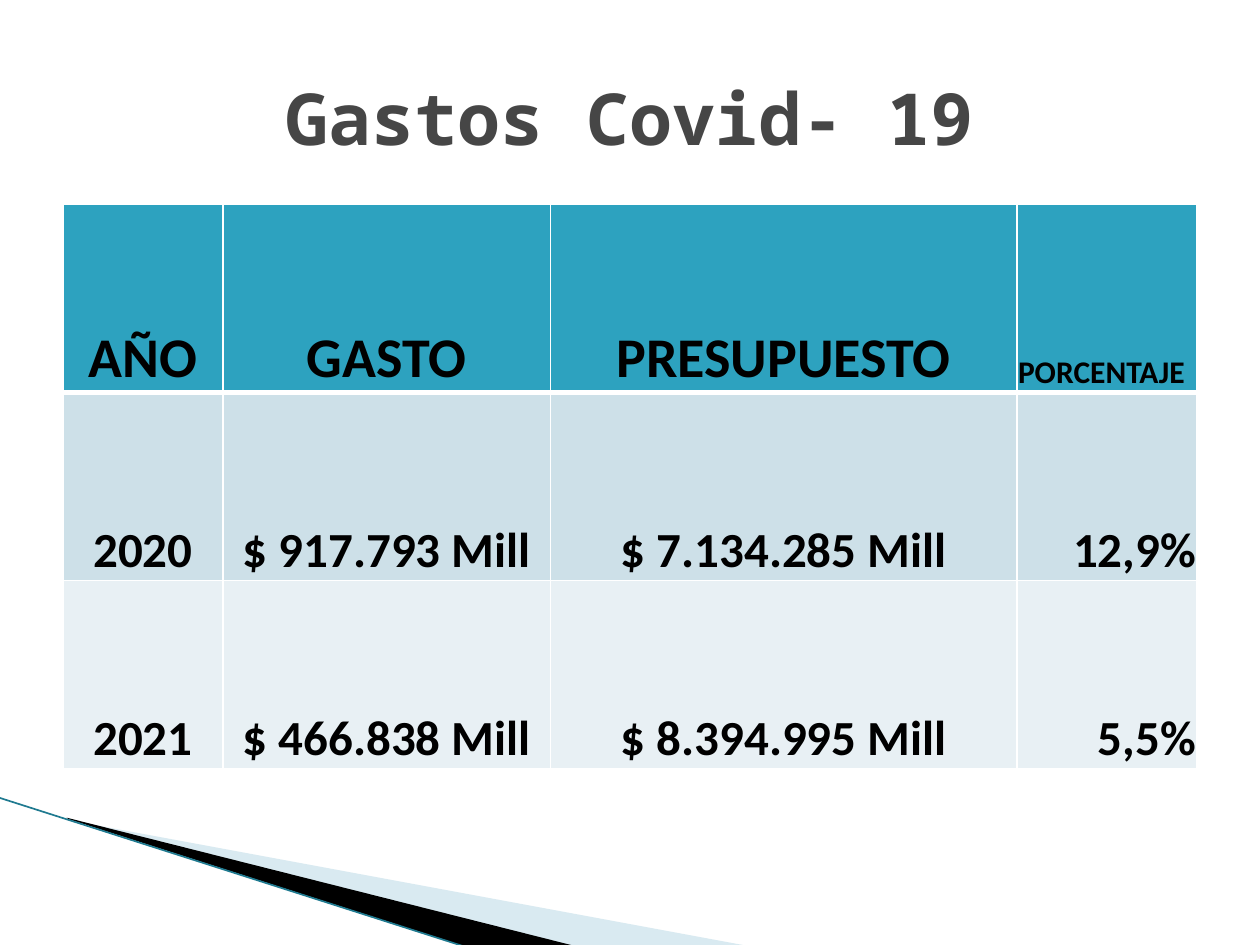
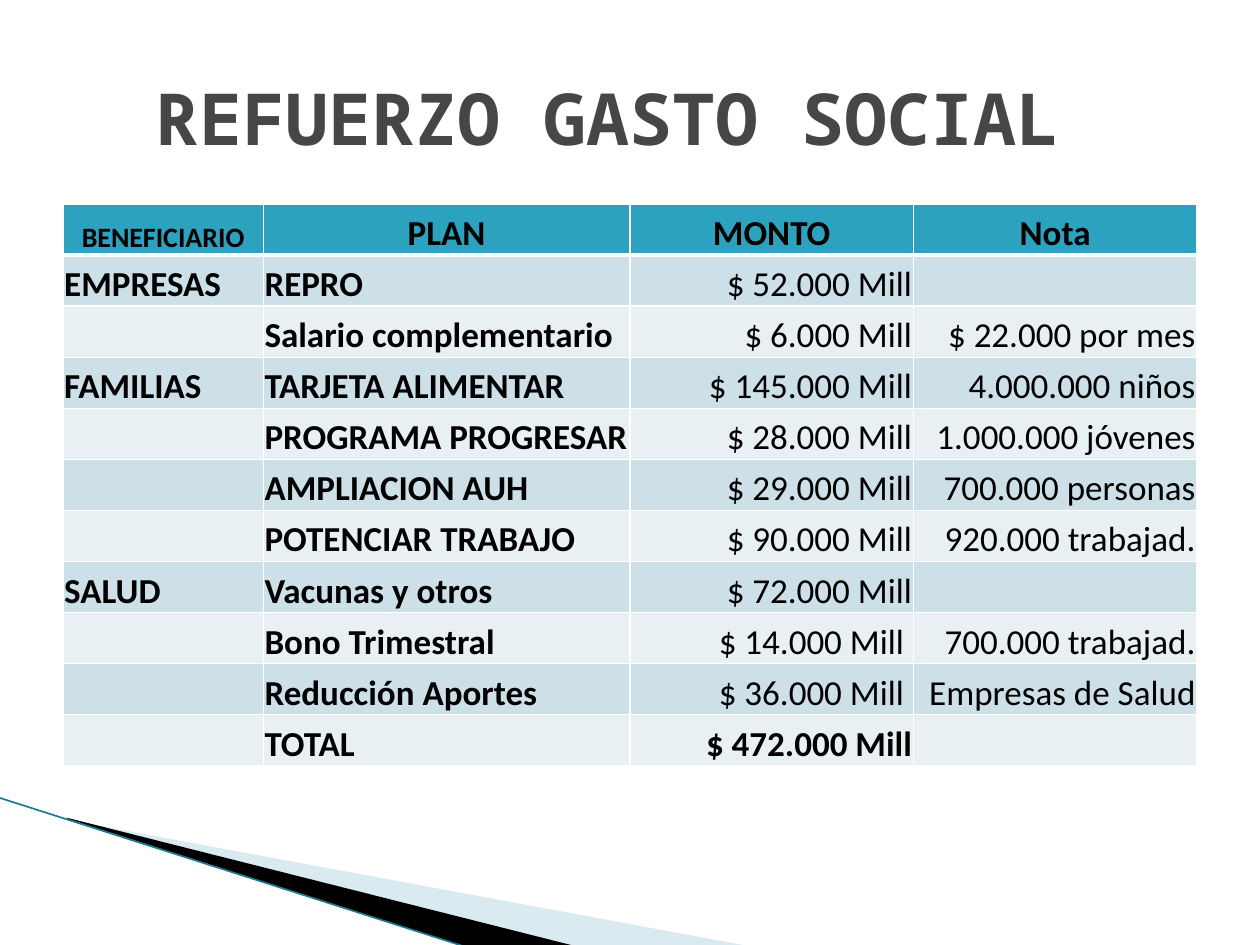
from lxml import etree
from pptx import Presentation
from pptx.dml.color import RGBColor
from pptx.enum import shapes, text
from pptx.oxml import ns
from pptx.util import Inches, Pt

# Content: alignments are one letter a column (l, c, r)
SLIDES = [
    {
        "title": "Gastos Covid- 19",
        "widths": [1.27, 2.6, 3.7, 1.43],
        "height": 4.48,
        "header_sizes": [32, 32, 32, 18],
        "header_align": "cccl",
        "body_size": 28,
        "body_align": "cccr",
        "bold_columns": {0, 1, 2, 3},
        "rows": [
            ("AÑO", "GASTO", "PRESUPUESTO", "PORCENTAJE"),
            ("2020", "$ 917.793 Mill", "$ 7.134.285 Mill", "12,9%"),
            ("2021", "$ 466.838 Mill", "$ 8.394.995 Mill", "5,5%"),
        ],
    },
    {
        "title": "REFUERZO GASTO SOCIAL ",
        "widths": [1.59, 2.91, 2.25, 2.25],
        "height": 4.46,
        "header_sizes": [16, 20, 20, 20],
        "header_align": "cccc",
        "body_size": 20,
        "body_align": "llrr",
        "bold_columns": {0, 1},
        "rows": [
            ("BENEFICIARIO", "PLAN", "MONTO", "Nota"),
            ("EMPRESAS", "REPRO", "$ 52.000 Mill", ""),
            ("", "Salario complementario", "$ 6.000 Mill", "$ 22.000 por mes"),
            ("FAMILIAS", "TARJETA ALIMENTAR", "$ 145.000 Mill", "4.000.000 niños"),
            ("", "PROGRAMA PROGRESAR", "$ 28.000 Mill", "1.000.000 jóvenes"),
            ("", "AMPLIACION AUH", "$ 29.000 Mill", "700.000 personas"),
            ("", "POTENCIAR TRABAJO", "$ 90.000 Mill", "920.000 trabajad."),
            ("SALUD", "Vacunas y otros", "$ 72.000 Mill", ""),
            ("", "Bono Trimestral", "$ 14.000 Mill ", "700.000 trabajad."),
            ("", "Reducción Aportes", "$ 36.000 Mill ", "Empresas de Salud"),
            ("", "TOTAL", "$ 472.000 Mill", ""),
        ],
    },
]

# Shared look
TITLE_FONT, TABLE_FONT = "Noto Sans Mono", "Calibri"
TITLE_GREY, INK, WHITE = "464646", "000000", "FFFFFF"
HEADER_FILL, BAND_FILLS = "2DA2BF", ("CDE0E8", "E8F0F4")
EDGE_LINE = "1F7A90"
ALIGN = {"l": text.PP_ALIGN.LEFT, "c": text.PP_ALIGN.CENTER, "r": text.PP_ALIGN.RIGHT}

# Corner wedges: outline, fill, opacity in percent
WEDGES = [
    ([(0.55, 6.51), (5.95, 7.51), (4.56, 7.51), (0.55, 6.5)], "A0CBDC", 40),
    ([(0.53, 6.49), (4.57, 7.51), (3.72, 7.52), (0.54, 6.5)], "000000", 100),
]


def color(hex_code):
    return RGBColor.from_string(hex_code)


def style_runs(para, font_name, size, hex_code, bold):
    for span in para.runs:
        span.font.name = font_name
        span.font.size = Pt(size)
        span.font.bold = bold
        span.font.color.rgb = color(hex_code)


def add_corner(page):
    for points, fill, opacity in WEDGES:
        corners = [(Inches(x), Inches(y)) for x, y in points]
        builder = page.shapes.build_freeform(*corners[0])
        builder.add_line_segments(corners[1:], close=True)
        wedge = builder.convert_to_shape()
        wedge.shadow.inherit = False
        wedge.line.fill.background()
        wedge.fill.solid()
        wedge.fill.fore_color.rgb = color(fill)
        if opacity < 100:
            tint = wedge.fill._xPr.find(".//" + ns.qn("a:srgbClr"))
            etree.SubElement(tint, ns.qn("a:alpha"), val=str(opacity * 1000))
    edge = page.shapes.add_connector(
        shapes.MSO_CONNECTOR.STRAIGHT,
        Inches(-0.01), Inches(6.33), Inches(3.71), Inches(7.52))
    edge.line.color.rgb = color(EDGE_LINE)
    edge.line.width = Pt(0.95)
    etree.SubElement(edge._element.spPr, ns.qn("a:effectLst"))


def add_title(page, title):
    box = page.shapes.add_textbox(Inches(0.5), Inches(0.3), Inches(9), Inches(1.25))
    frame = box.text_frame
    frame.word_wrap = True
    frame.vertical_anchor = text.MSO_ANCHOR.MIDDLE
    frame.text = title
    para = frame.paragraphs[0]
    para.alignment = ALIGN["c"]
    style_runs(para, TITLE_FONT, 41, TITLE_GREY, True)


def set_borders(cell, widths):
    """Widths in points for the left, right, top and bottom side."""
    properties = cell._tc.get_or_add_tcPr()
    for index, (side, width) in enumerate(zip("LRTB", widths)):
        line = etree.Element(ns.qn(f"a:ln{side}"), w=str(Pt(width)))
        fill = etree.SubElement(line, ns.qn("a:solidFill"))
        etree.SubElement(fill, ns.qn("a:srgbClr"), val=WHITE)
        properties.insert(index, line)


def fill_cell(cell, words, fill, size, align, bold):
    cell.margin_left = cell.margin_right = cell.margin_top = Inches(0.01)
    cell.margin_bottom = 0
    cell.vertical_anchor = text.MSO_ANCHOR.BOTTOM
    cell.fill.solid()
    cell.fill.fore_color.rgb = color(fill)
    para = cell.text_frame.paragraphs[0]
    para.alignment = ALIGN[align]
    if words:
        para.text = words
        style_runs(para, TABLE_FONT, size, INK, bold)
    else:
        para.font.size = Pt(size)


def add_spending_table(page, content):
    rows, widths = content["rows"], content["widths"]
    table = page.shapes.add_table(
        len(rows), len(widths), Inches(0.5), Inches(1.62),
        Inches(9), Inches(content["height"])).table
    table.horz_banding = False
    for column, width in zip(table.columns, widths):
        column.width = Inches(width)
    for r, row in enumerate(rows):
        table.rows[r].height = Inches(content["height"] / len(rows))
        header = r == 0
        fill = HEADER_FILL if header else BAND_FILLS[(r - 1) % 2]
        align = content["header_align" if header else "body_align"]
        for c, words in enumerate(row):
            size = content["header_sizes"][c] if header else content["body_size"]
            bold = header or "TOTAL" in row or c in content["bold_columns"]
            cell = table.cell(r, c)
            fill_cell(cell, words, fill, size, align[c], bold)
            # A thick rule parts the header from the body
            set_borders(cell, (1, 1, 3 if r == 1 else 1, 3 if header else 1))


def main():
    deck = Presentation()
    deck.slide_width, deck.slide_height = Inches(10), Inches(7.5)
    for content in SLIDES:
        page = deck.slides.add_slide(deck.slide_layouts[6])
        add_corner(page)
        add_spending_table(page, content)
        add_title(page, content["title"])
    deck.save("out.pptx")


if __name__ == "__main__":
    main()
